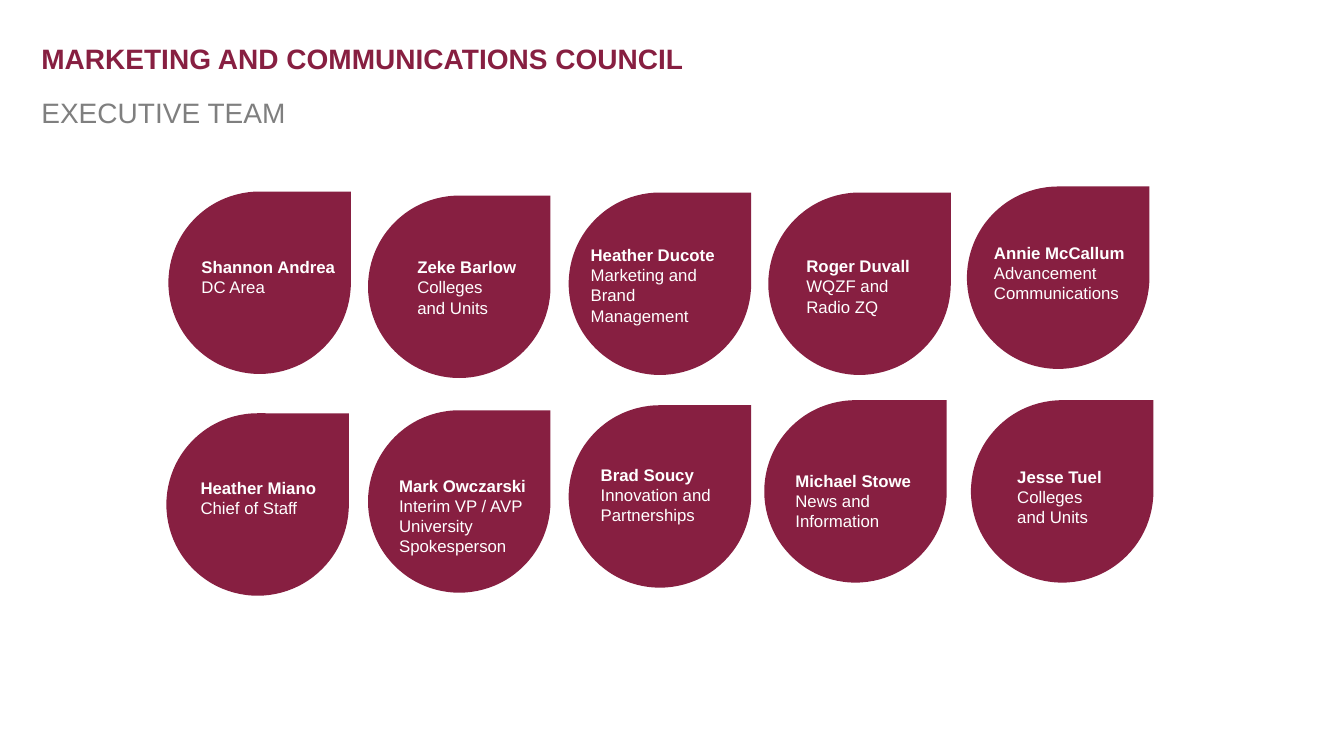
from dataclasses import dataclass

from pptx import Presentation
from pptx.dml.color import RGBColor
from pptx.enum.shapes import MSO_SHAPE as SHAPE
from pptx.enum.text import MSO_ANCHOR as ANCHOR, MSO_AUTO_SIZE as AUTOSIZE, PP_ALIGN as ALIGN
from pptx.util import Inches, Pt


@dataclass(frozen=True)
class Theme:
    font: str = "Arial"
    maroon: RGBColor = RGBColor(0x87, 0x1F, 0x41)
    gray: RGBColor = RGBColor(0x7F, 0x7F, 0x7F)
    white: RGBColor = RGBColor(0xFF, 0xFF, 0xFF)
    heading: Pt = Pt(20)
    label: Pt = Pt(12)


THEME = Theme()
DROP_SIZE = 1.81

# Name, role, drop (left, top), label (left, top, width, height)
MEMBERS = [
    ("Shannon Andrea", "DC Area", (1.67, 1.9), (1.9, 2.5, 1.55, 0.5)),
    ("Zeke Barlow", "Colleges\nand Units", (3.65, 1.94), (4.04, 2.5, 1.81, 0.71)),
    ("Heather Ducote", "Marketing and\nBrand Management", (5.64, 1.91), (5.76, 2.38, 1.66, 0.71)),
    ("Roger Duvall", "WQZF and\nRadio ZQ", (7.62, 1.91), (7.9, 2.49, 1.73, 0.71)),
    ("Annie McCallum", "Advancement\nCommunications", (9.59, 1.85), (9.76, 2.36, 1.71, 0.71)),
    ("Heather Miano", "Chief of Staff", (1.65, 4.1), (1.89, 4.69, 1.58, 0.5)),
    ("Mark Owczarski", "Interim VP / AVP\nUniversity\nSpokesperson", (3.65, 4.07), (3.86, 4.67, 1.95, 0.91)),
    ("Brad Soucy", "Innovation and\nPartnerships", (5.64, 4.02), (5.86, 4.56, 1.73, 0.71)),
    ("Michael Stowe", "News and\nInformation", (7.58, 3.97), (7.79, 4.62, 1.81, 0.71)),
    ("Jesse Tuel", "Colleges\nand Units", (9.63, 3.97), (9.99, 4.58, 1.18, 0.91)),
]


def style(p, size, color, bold=False):
    p.alignment = ALIGN.LEFT
    p.space_before = Pt(0)
    p.font.name = THEME.font
    p.font.size = size
    p.font.bold = bold
    p.font.color.rgb = color


def fill_heading(sp, text, box, color, bold=False, spacing=1.0):
    sp.left, sp.top, sp.width, sp.height = map(Inches, box)
    tf = sp.text_frame
    tf.text = text
    tf.auto_size = AUTOSIZE.NONE
    tf.vertical_anchor = ANCHOR.TOP
    p = tf.paragraphs[0]
    style(p, THEME.heading, color, bold)
    p.line_spacing = spacing


def add_drop(shapes, left, top):
    sp = shapes.add_shape(SHAPE.TEAR, *map(Inches, (left, top, DROP_SIZE, DROP_SIZE)))
    sp.shadow.inherit = False
    sp.fill.solid()
    sp.fill.fore_color.rgb = THEME.maroon
    sp.line.fill.background()


def add_label(shapes, name, role, box):
    tf = shapes.add_textbox(*map(Inches, box)).text_frame
    tf.word_wrap = True
    p = tf.paragraphs[0]
    p.text = name
    style(p, THEME.label, THEME.white, bold=True)
    p = tf.add_paragraph()
    p.text = role
    style(p, THEME.label, THEME.white)


def add_member(slide, name, role, drop, label):
    group = slide.shapes.add_group_shape()
    add_drop(group.shapes, *drop)
    add_label(group.shapes, name, role, label)


def main():
    prs = Presentation()
    prs.slide_width, prs.slide_height = Inches(13.33), Inches(7.5)
    slide = prs.slides.add_slide(prs.slide_layouts[0])

    # Headings
    title, subtitle = slide.placeholders
    fill_heading(title, "MARKETING AND COMMUNICATIONS COUNCIL",
                 (0.31, 0.4, 7.47, 0.73), THEME.maroon, bold=True, spacing=0.9)
    fill_heading(subtitle, "EXECUTIVE TEAM", (0.31, 0.9, 4.76, 0.44), THEME.gray)

    # Team members
    for member in MEMBERS:
        add_member(slide, *member)

    prs.save("out.pptx")


if __name__ == "__main__":
    main()
